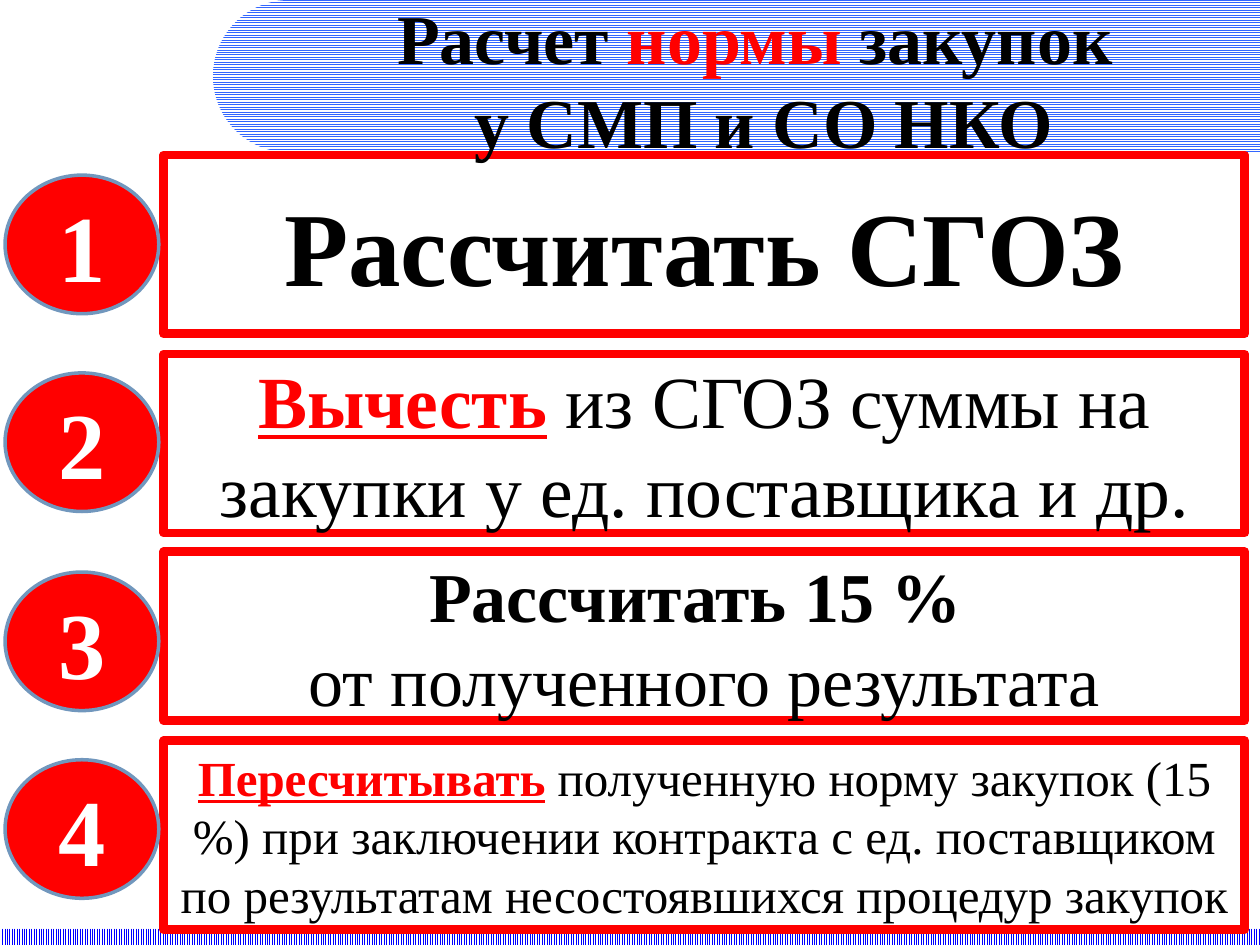
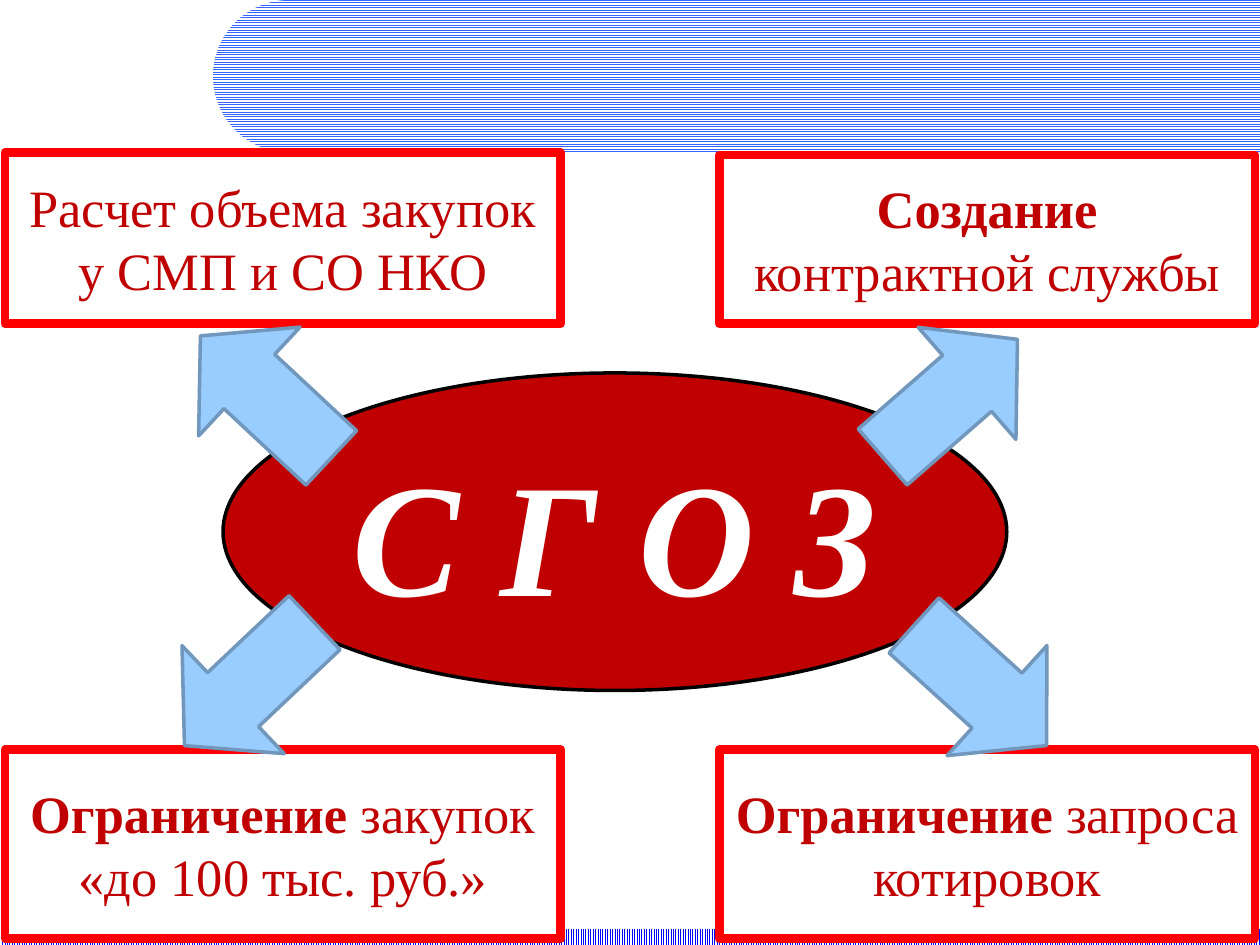
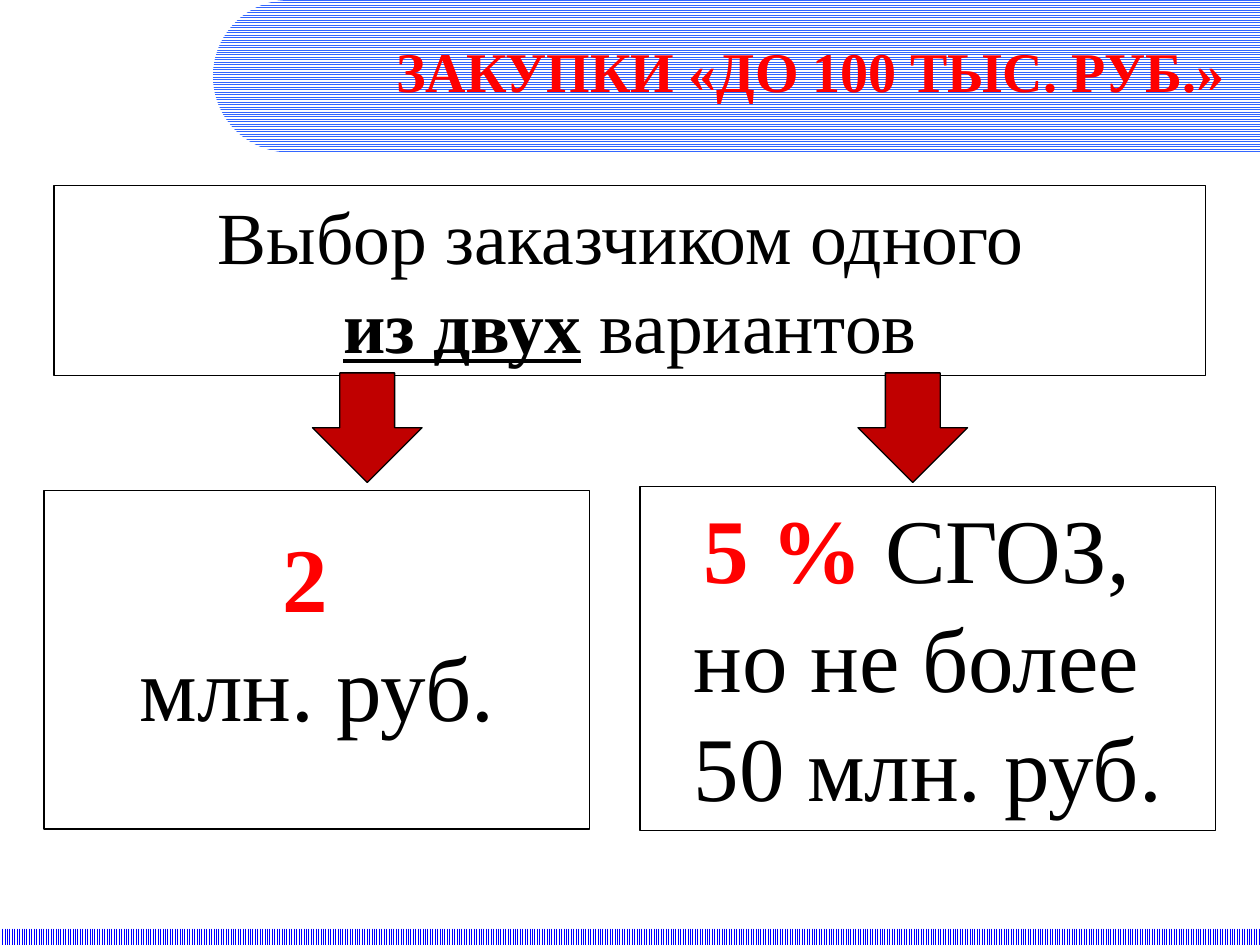
import math

import pptx
import pptx.dml.color
import pptx.enum.dml
import pptx.enum.shapes
import pptx.enum.text
import pptx.util

Inches = pptx.util.Inches
Pt = pptx.util.Pt
RGBColor = pptx.dml.color.RGBColor
Shape = pptx.enum.shapes.MSO_SHAPE
Pattern = pptx.enum.dml.MSO_PATTERN
Anchor = pptx.enum.text.MSO_ANCHOR

WHITE = RGBColor(0xFF, 0xFF, 0xFF)
BLACK = RGBColor(0x00, 0x00, 0x00)
RED = RGBColor(0xFF, 0x00, 0x00)
DARK_RED = RGBColor(0xC0, 0x00, 0x00)
BAND_BLUE = RGBColor(0x33, 0x66, 0xFF)
FOOTER_BLUE = RGBColor(0x00, 0x00, 0xFF)
SKY = RGBColor(0x99, 0xCC, 0xFF)
STEEL = RGBColor(0x71, 0x97, 0xBD)

FONT = "Times New Roman"
WIDTH, HEIGHT = 10, 7.5
BAND_LEFT, BAND_HEIGHT = 1.69, 1.21

# Font changes of a span
PLAIN = {}
BOLD = {"bold": True}
BOLD_RED = {"bold": True, "color": RED}
LINED = {"bold": True, "underline": True}
LINED_RED = {**LINED, "color": RED}


class Presenter:
    """Holds the shared style and the slide being built."""

    def __init__(self):
        self.deck = pptx.Presentation()
        self.deck.slide_width = Inches(WIDTH)
        self.deck.slide_height = Inches(HEIGHT)
        self.page = None

    def new_page(self):
        self.page = self.deck.slides.add_slide(self.deck.slide_layouts[6])
        self.band()
        footer = self.shape(Shape.RECTANGLE, (0, 7.37, WIDTH, 0.13))
        self.pattern(footer, Pattern.NARROW_VERTICAL, FOOTER_BLUE)

    def band(self):
        """Top band with a half-round left end."""
        radius = BAND_HEIGHT / 2
        angles = [math.radians(90 + 4 * step) for step in range(46)]
        outline = [(BAND_LEFT + radius + radius * math.cos(angle),
                    radius + radius * math.sin(angle)) for angle in angles]
        points = [(Inches(x), Inches(y)) for x, y in outline + [(WIDTH, 0)]]
        builder = self.page.shapes.build_freeform(Inches(WIDTH), Inches(BAND_HEIGHT))
        builder.add_line_segments(points, close=True)
        band = builder.convert_to_shape()
        band.shadow.inherit = False
        band.line.fill.background()
        self.pattern(band, Pattern.NARROW_HORIZONTAL, BAND_BLUE)

    def pattern(self, shape, pattern, color):
        shape.fill.patterned()
        shape.fill.pattern = pattern
        shape.fill.fore_color.rgb = color
        shape.fill.back_color.rgb = WHITE

    def shape(self, kind, place, fill=None, line=None, weight=0.75):
        shape = self.page.shapes.add_shape(kind, *map(Inches, place))
        shape.shadow.inherit = False
        if fill is None:
            shape.fill.background()
        else:
            shape.fill.solid()
            shape.fill.fore_color.rgb = fill
        if line is None:
            shape.line.fill.background()
        else:
            shape.line.color.rgb = line
            shape.line.width = Pt(weight)
        return shape

    def put_text(self, shape, paragraphs, size, color=BLACK, anchor=Anchor.MIDDLE):
        """Each paragraph is a list of (text, changes to the font) pairs."""
        frame = shape.text_frame
        frame.word_wrap = True
        frame.vertical_anchor = anchor
        for index, spans in enumerate(paragraphs):
            para = frame.paragraphs[0] if index == 0 else frame.add_paragraph()
            para.alignment = pptx.enum.text.PP_ALIGN.CENTER
            para.font.name = FONT
            para.font.size = Pt(size)
            para.font.color.rgb = color
            for text, changes in spans:
                span = para.add_run()
                span.text = text
                span.font.bold = changes.get("bold")
                span.font.italic = changes.get("italic")
                span.font.underline = changes.get("underline")
                if "color" in changes:
                    span.font.color.rgb = changes["color"]

    def title(self, place, paragraphs, size, color=BLACK, anchor=Anchor.MIDDLE):
        box = self.page.shapes.add_textbox(*map(Inches, place))
        self.put_text(box, paragraphs, size, color, anchor)

    def red_box(self, place, paragraphs, size, color=BLACK):
        box = self.shape(Shape.RECTANGLE, place, WHITE, RED, 5)
        self.put_text(box, paragraphs, size, color)

    def thin_box(self, place, paragraphs, size, top_margin=0.05):
        box = self.shape(Shape.RECTANGLE, place, line=BLACK)
        box.text_frame.margin_top = Inches(top_margin)
        self.put_text(box, paragraphs, size, anchor=Anchor.TOP)

    def number(self, top, text):
        circle = self.shape(Shape.FLOWCHART_CONNECTOR, (0.04, top, 1.22, 1.1), RED, STEEL, 2)
        self.put_text(circle, [[(text, BOLD)]], 54, WHITE)

    def arrow(self, place, fill, line, weight=0.75, head=0.5, rotation=0):
        arrow = self.shape(Shape.DOWN_ARROW, place, fill, line, weight)
        arrow.adjustments[0] = 0.5
        arrow.adjustments[1] = head
        arrow.rotation = rotation


def steps_page(show):
    show.new_page()
    # Numbered steps: box top, box height, circle top, text size, text
    steps = [
        (1.23, 1.42, 1.39, 60, [[("Рассчитать СГОЗ", BOLD)]]),
        (2.81, 1.42, 2.96, 42, [[("Вычесть", LINED_RED),
                                 (" из СГОЗ суммы на закупки у ед. поставщика и др.", PLAIN)]]),
        (4.38, 1.34, 4.54, 40, [[("Рассчитать 15 % ", BOLD)],
                                [("от полученного результата", PLAIN)]]),
        (5.88, 1.5, 6.03, 28, [[("Пересчитывать", LINED_RED),
                                (" полученную норму закупок (15 %) при заключении контракта"
                                 " с ед. поставщиком по результатам несостоявшихся"
                                 " процедур закупок", PLAIN)]]),
    ]
    for index, (top, height, circle_top, size, text) in enumerate(steps, 1):
        show.red_box((1.3, top, 8.58, height), text, size)
        show.number(circle_top, str(index))
    show.title((2.32, 0.05, 7.48, 1.15),
               [[("Расчет ", BOLD), ("нормы", BOLD_RED), (" закупок ", BOLD)],
                [("у СМП и СО НКО", BOLD)]], 40)


def uses_page(show):
    show.new_page()
    # Central oval
    oval = show.shape(Shape.OVAL, (1.77, 2.96, 6.22, 2.52), DARK_RED, BLACK, 2)
    show.put_text(oval, [[("С Г О З", {"bold": True, "italic": True})]], 92, WHITE)

    # Four corner boxes
    left, right = (0.04, 4.41), (5.71, 4.25)
    corners = [
        (left, 1.21, 1.36, [("Расчет объема закупок у СМП и СО НКО", PLAIN)]),
        (right, 1.23, 1.34, [("Создание ", BOLD), ("контрактной службы", PLAIN)]),
        (left, 5.95, 1.5, [("Ограничение", BOLD), (" закупок «до 100 тыс. руб.»", PLAIN)]),
        (right, 5.95, 1.5, [("Ограничение", BOLD), (" запроса котировок", PLAIN)]),
    ]
    for (x, width), top, height, spans in corners:
        show.red_box((x, top, width, height), [spans], 30, DARK_RED)

    # Arrows from the oval to the boxes
    for x, y, rotation in [(7.19, 4.73, 312.2), (1.39, 4.72, 46.6),
                           (6.95, 2.45, 228.9), (1.52, 2.44, 133)]:
        show.arrow((x, y, 1.18, 1.42), SKY, STEEL, 2, 0.45, rotation)


def limit_page(show):
    show.new_page()
    show.title((2.87, 0.24, 7.13, 0.64), [[("ЗАКУПКИ «ДО 100 ТЫС. РУБ.»", BOLD)]],
               32, RED, Anchor.TOP)

    # The choice and its two options
    show.thin_box((0.43, 1.47, 9.14, 1.51),
                  [[("Выбор заказчиком одного ", PLAIN)],
                   [("из двух", LINED), (" вариантов", PLAIN)]], 42)
    show.thin_box((0.35, 3.89, 4.33, 2.69),
                  [[("2 ", BOLD_RED)], [("млн. руб.", PLAIN)]], 52, top_margin=0.25)
    show.thin_box((5.08, 3.86, 4.57, 2.73),
                  [[("5 % ", BOLD_RED), ("СГОЗ, ", PLAIN)],
                   [("но не более ", PLAIN)],
                   [("50 млн. руб.", PLAIN)]], 52)
    for x in (2.48, 6.81):
        show.arrow((x, 2.96, 0.87, 0.87), DARK_RED, BLACK)


def main():
    show = Presenter()
    steps_page(show)
    uses_page(show)
    limit_page(show)
    show.deck.save("out.pptx")


if __name__ == "__main__":
    main()
